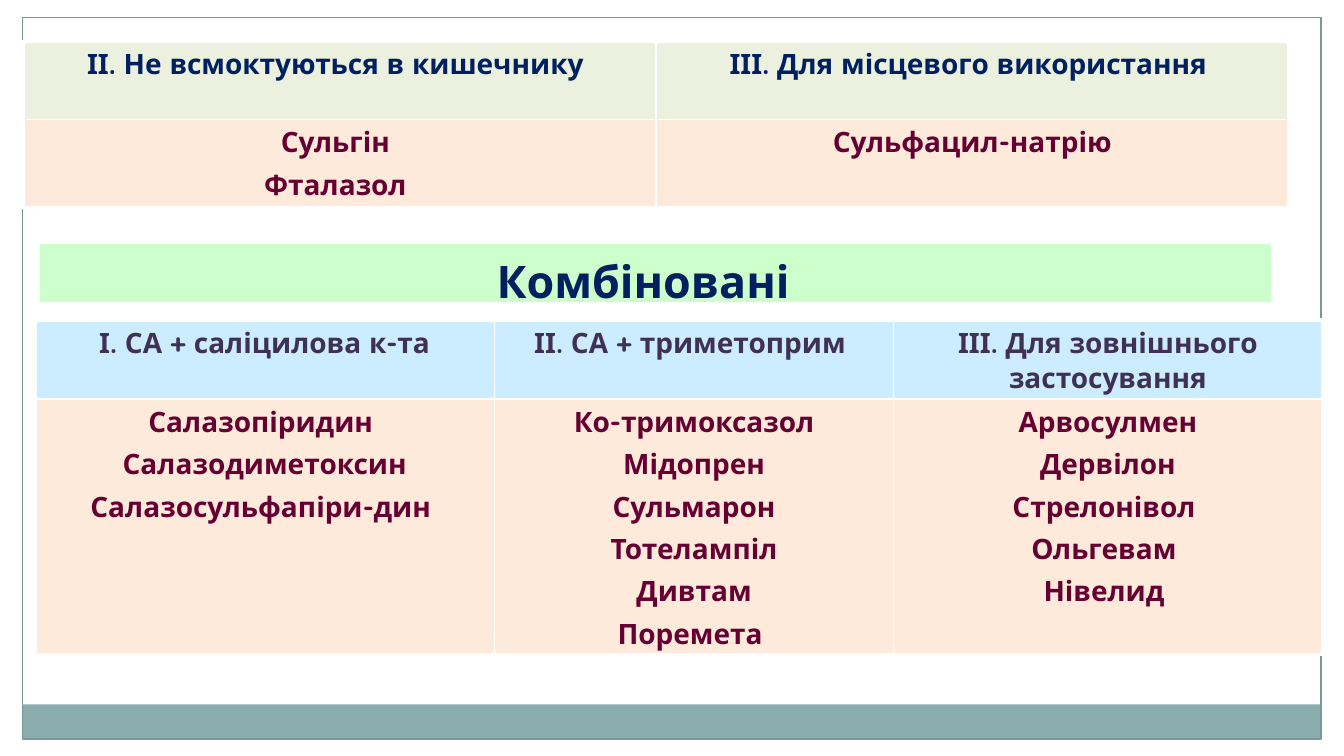
from pptx import Presentation
from pptx.dml.color import RGBColor
from pptx.enum.shapes import MSO_SHAPE
from pptx.enum.text import PP_ALIGN
from pptx.oxml import parse_xml
from pptx.oxml.ns import nsdecls
from pptx.util import Inches, Pt

RECT = MSO_SHAPE.RECTANGLE
CENTER = PP_ALIGN.CENTER
WHITE, NAVY, PURPLE, MAROON = "FFFFFF", "002060", "403152", "660033"
GREEN, BLUE, PEACH = "EBF1DE", "CCECFF", "FDEADA"
FONT = {"name": "Quicksand", "bold": True}
CELL_MARGINS = {"margin_left": 0, "margin_right": 0,
                "margin_top": Inches(0.04), "margin_bottom": Inches(0.04)}

ABSORPTION = [
    ["ІІ. Не всмоктуються в кишечнику ", "ІІІ. Для місцевого використання "],
    ["Сульгін \nФталазол ", "Сульфацил-натрію"],
]
COMBINED = [
    ["І. СА + саліцилова к-та", "ІІ. СА + триметоприм ",
     "ІІІ. Для зовнішнього застосування"],
    ["Салазопіридин \nСалазодиметоксин\nСалазосульфапіри-дин ",
     "Ко-тримоксазол\nМідопрен\nСульмарон\nТотелампіл\nДивтам\nПоремета ",
     "Арвосулмен\nДервілон\nСтрелонівол \nОльгевам \nНівелид "],
]


def color(value):
    """Return the colour for a hex string."""
    return RGBColor.from_string(value)


def set_values(target, values):
    """Set each named attribute on the target."""
    for name, value in values.items():
        setattr(target, name, value)


def write(tf, text, size, ink):
    """Write one centred bold paragraph per line of text."""
    for i, line in enumerate(text.split("\n")):
        p = tf.add_paragraph() if i else tf.paragraphs[0]
        set_values(p, {"alignment": CENTER, "space_before": Pt(4 if i else 0)})
        r = p.add_run()
        r.text = line
        set_values(r.font, {**FONT, "size": Pt(size)})
        r.font.color.rgb = color(ink)


def add_rect(s, box, fill=None, line=None):
    """Add a flat rectangle with an optional fill and outline."""
    sp = s.shapes.add_shape(RECT, *map(Inches, box))
    sp.shadow.inherit = False
    if fill:
        sp.fill.solid()
        sp.fill.fore_color.rgb = color(fill)
    else:
        sp.fill.background()
    if line:
        sp.line.color.rgb = color(line)
        sp.line.width = Pt(0.75)
    else:
        sp.line.fill.background()


def add_borders(cell, outer):
    """Give a cell white borders, thicker on the table's outer sides."""
    tc_pr = cell._tc.get_or_add_tcPr()
    for side in "LRTB":
        width = Pt(2.25 if side in outer else 1)
        tc_pr.append(parse_xml(
            f'<a:ln{side} {nsdecls("a")} w="{width}"><a:solidFill>'
            f'<a:srgbClr val="{WHITE}"/></a:solidFill></a:ln{side}>'))


def add_drug_table(s, box, widths, heights, rows, head_fill, head_ink):
    """Add a table with a coloured heading row above a row of drug lists."""
    frame = s.shapes.add_table(len(rows), len(widths), *map(Inches, box))
    table = frame.table
    for col, width in zip(table.columns, widths):
        col.width = Inches(width)
    styles = [(head_fill, head_ink), (PEACH, MAROON)]
    for i, (texts, height, (fill, ink)) in enumerate(zip(rows, heights, styles)):
        table.rows[i].height = Inches(height)
        for j, text in enumerate(texts):
            cell = table.cell(i, j)
            outer = {"T" if i == 0 else "B"}
            outer |= {"L"} if j == 0 else set()
            outer |= {"R"} if j == len(widths) - 1 else set()
            add_borders(cell, outer)
            cell.fill.solid()
            cell.fill.fore_color.rgb = color(fill)
            set_values(cell, CELL_MARGINS)
            write(cell.text_frame, text, 15, ink)


def add_frame(s, box):
    """Add the page outline with a band along its bottom."""
    left, top, width, height = box
    add_rect(s, (left, top + height - 0.26, width, 0.25), "8CADAE")
    add_rect(s, box, line="7C999A")


def add_banner(s, box, text):
    """Add the green section banner and its title."""
    left, top, width, height = box
    add_rect(s, box, "CCFFCC", WHITE)
    title = s.shapes.add_textbox(
        Inches(left + 1.37), Inches(top + 0.03), Inches(6.25), Inches(0.38))
    title.text_frame.word_wrap = True
    write(title.text_frame, text, 24, NAVY)


def main():
    """Build and save the slide."""
    prs = Presentation()
    set_values(prs, {"slide_width": Inches(10), "slide_height": Inches(10 * 9 / 16)})
    s = prs.slides.add_slide(prs.slide_layouts[6])
    add_frame(s, (0.17, 0.13, 9.66, 5.37))
    add_drug_table(s, (0.17, 0.31, 9.42, 1.21), [4.71, 4.71], [0.58, 0.63],
                   ABSORPTION, GREEN, NAVY)
    add_banner(s, (0.29, 1.81, 9.17, 0.44), "Комбіновані")
    add_drug_table(s, (0.26, 2.38, 9.58, 2.49), [3.42, 2.97, 3.19], [0.59, 1.9],
                   COMBINED, BLUE, PURPLE)
    prs.save("out.pptx")


if __name__ == "__main__":
    main()
